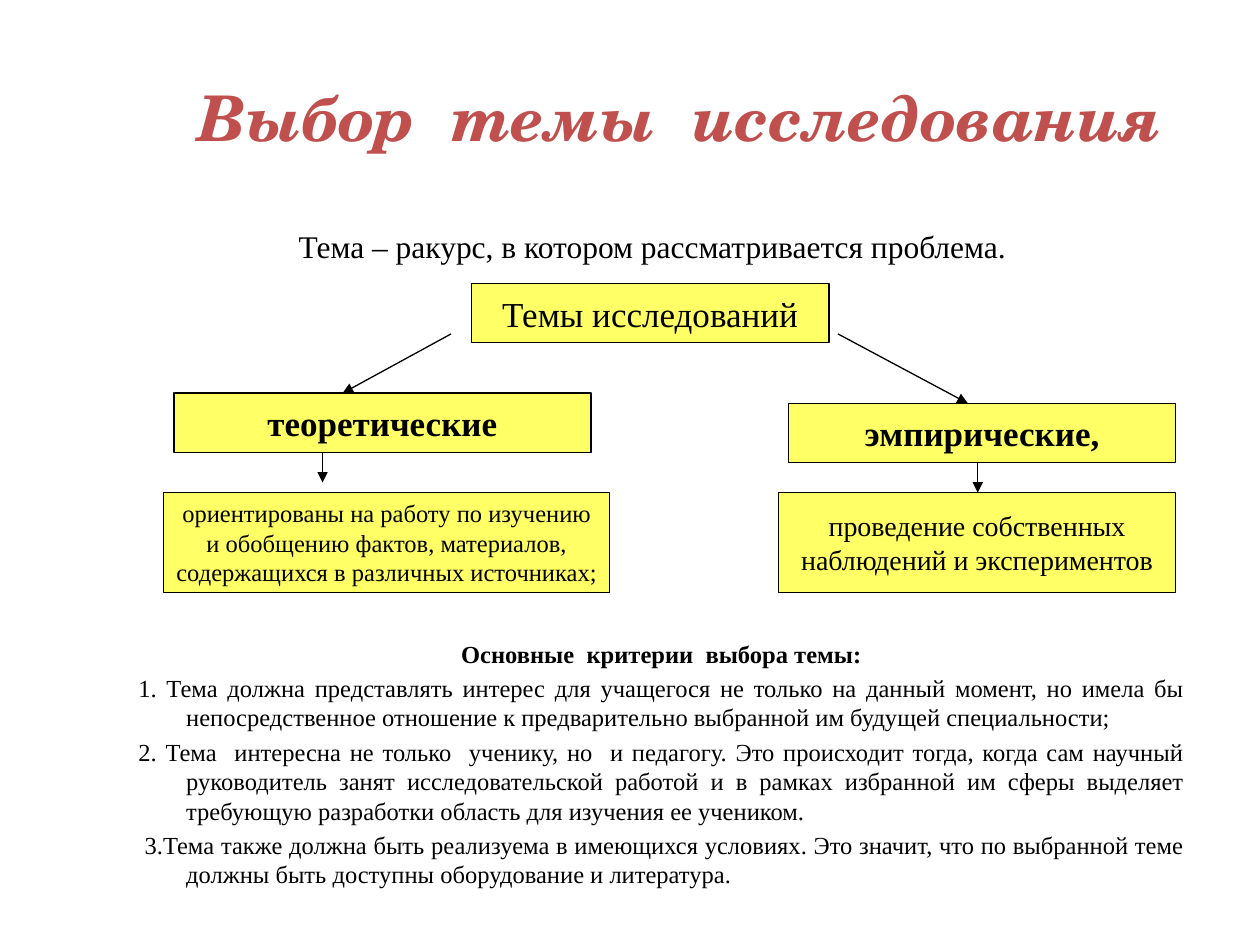
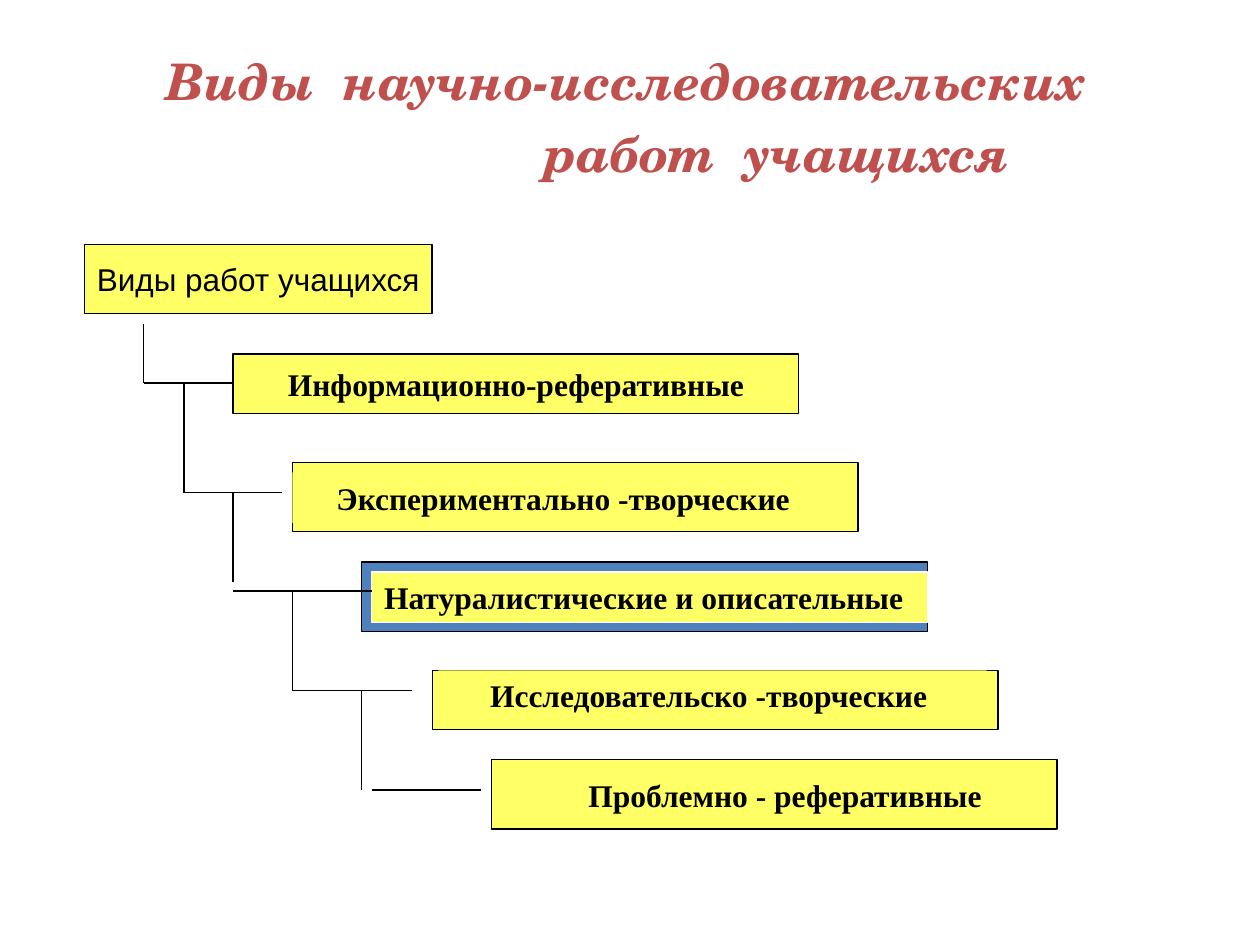
from lxml import etree
from pptx import Presentation
from pptx.dml.color import RGBColor
from pptx.enum.shapes import MSO_CONNECTOR, MSO_SHAPE
from pptx.enum.text import MSO_ANCHOR, PP_ALIGN
from pptx.oxml.ns import qn
from pptx.util import Inches, Pt

RECT = MSO_SHAPE.RECTANGLE
LINE = MSO_CONNECTOR.STRAIGHT
TOP, MIDDLE = MSO_ANCHOR.TOP, MSO_ANCHOR.MIDDLE
LEFT, CENTER, JUSTIFY = PP_ALIGN.LEFT, PP_ALIGN.CENTER, PP_ALIGN.JUSTIFY

YELLOW, BLUE, RED = "FFFF66", "4F81BD", "C0504D"
BLACK, WHITE = "000000", "FFFFFF"
SERIF, SANS, SCRIPT = "Times New Roman", "Arial", "TeX Gyre Schola"
COLS, ROWS = 100, 75
THIN = Pt(0.75)


def rgb(code):
    return RGBColor.from_string(code)


def indent(par, left, first=0):
    """Set the left margin and first-line indent of a paragraph, in inches."""
    props = par._p.get_or_add_pPr()
    props.set("marL", str(Inches(left)))
    props.set("indent", str(Inches(first)))


class Deck:
    """Holds the style and the current slide; lengths are grid columns and rows."""

    def __init__(self):
        self.prs = Presentation()
        self.prs.slide_width, self.prs.slide_height = Inches(10), Inches(7.5)
        self.col = self.prs.slide_width / COLS
        self.row = self.prs.slide_height / ROWS

    def page(self):
        self.slide = self.prs.slides.add_slide(self.prs.slide_layouts[6])
        self.slide.background.fill.solid()
        self.slide.background.fill.fore_color.rgb = rgb(WHITE)

    def grid(self, *nums):
        """Turn alternating columns and rows into lengths."""
        return [round(n * (self.row if i % 2 else self.col))
                for i, n in enumerate(nums)]

    def label(self, shape, lines, size, font=SERIF, bold=False, color=BLACK,
              align=CENTER, anchor=MIDDLE, wrap=True, inset=0.1):
        frame = shape.text_frame
        frame.text = "\n".join(lines)
        frame.word_wrap, frame.vertical_anchor = wrap, anchor
        frame.margin_left = Inches(inset)
        for par in frame.paragraphs:
            par.alignment = align
            for run in par.runs:
                run.font.size, run.font.name = Pt(size), font
                run.font.bold, run.font.color.rgb = bold, rgb(color)
        return frame.paragraphs

    def text(self, at, lines, size, **style):
        shape = self.slide.shapes.add_textbox(*self.grid(*at))
        return self.label(shape, lines, size, **style)

    def title(self, at, lines, size, **style):
        pars = self.text(at, lines, size, font=SCRIPT, bold=True, color=RED, **style)
        for par in pars:
            for run in par.runs:
                run.font.italic = True
        return pars

    def box(self, at, lines=(), size=18, fill=YELLOW, edge=BLACK, **style):
        shape = self.slide.shapes.add_shape(RECT, *self.grid(*at))
        shape.shadow.inherit = False
        shape.fill.solid()
        shape.fill.fore_color.rgb = rgb(fill)
        if edge:
            shape.line.color.rgb, shape.line.width = rgb(edge), THIN
        else:
            shape.line.fill.background()
        if lines:
            self.label(shape, lines, size, **style)

    def line(self, *ends, arrow=False):
        link = self.slide.shapes.add_connector(LINE, *self.grid(*ends))
        link.line.color.rgb, link.line.width = rgb(BLACK), THIN
        props = link._element.spPr
        if arrow:
            tail = etree.SubElement(props.find(qn("a:ln")), qn("a:tailEnd"))
            tail.set("type", "triangle")
        etree.SubElement(props, qn("a:effectLst"))


def topics(deck):
    deck.page()
    deck.title((6.7, 3, 90.6, 12.5), ["Выбор  темы  исследования"], 36, inset=0.51)
    deck.text((10, 17.5, 85, 4.2),
              ["Тема – ракурс, в котором рассматривается проблема."],
              18, align=LEFT, anchor=TOP, inset=1.37)

    pars = deck.text((10, 50.2, 85, 22), [
        "Основные  критерии  выбора темы:",
        "1. Тема должна представлять интерес для учащегося не только на данный "
        "момент, но имела бы непосредственное отношение к предварительно "
        "выбранной им будущей специальности;",
        "2. Тема  интересна не только  ученику, но  и педагогу. Это происходит "
        "тогда, когда сам научный руководитель занят исследовательской работой "
        "и в рамках избранной им сферы выделяет требующую разработки область "
        "для изучения ее учеником.",
        "3.Тема также должна быть реализуема в имеющихся условиях. Это значит, "
        "что по выбранной теме должны быть доступны оборудование и литература.",
    ], 14, align=JUSTIFY, anchor=TOP)
    head, *items = pars
    head.alignment, head.runs[0].font.bold = CENTER, True
    for par, first in zip(items, (-0.38, -0.38, -0.33)):
        indent(par, 0.38, first)
        par.space_before = Pt(2.8)

    for at, size, bold, lines in (
        ((37.4, 22.5, 28.4, 4.7), 20, False, ["Темы исследований"]),
        ((13.8, 31.2, 33.1, 4.7), 20, True, ["теоретические"]),
        ((62.6, 32, 30.7, 4.7), 20, True, ["эмпирические,"]),
        ((13, 39.1, 35.4, 7.9), 14, False,
         ["ориентированы на работу по изучению",
          "и обобщению фактов, материалов,",
          "содержащихся в различных источниках;"]),
        ((61.8, 39.1, 31.5, 7.9), 16, False,
         ["проведение собственных", "наблюдений и экспериментов"]),
    ):
        deck.box(at, lines, size, bold=bold, wrap=False)

    for ends in ((35.8, 26.5, 27.2, 31.2), (66.5, 26.5, 76.8, 32),
                 (25.6, 35.9, 25.6, 38.3), (77.6, 36.7, 77.6, 39.1)):
        deck.line(*ends, arrow=True)


def kinds(deck):
    deck.page()
    pars = deck.title((10, 3, 90, 12.5),
                      ["Виды  научно-исследовательских", "работ  учащихся"],
                      28.8, align=LEFT)
    for par, left in zip(pars, (0.22, 3.22)):
        indent(par, left)
    pars[1].space_before = Pt(6.5)

    deck.box((6.7, 19.4, 27.6, 5.5), ["Виды работ учащихся"], font=SANS, wrap=False)
    wide = 44.9
    deck.box((18.5, 28.1, wide, 4.7), ["Информационно-реферативные"],
             bold=True, wrap=False)
    for x, y, high, fill in ((23.2, 36.7, 5.5, YELLOW), (28.7, 44.6, 5.5, BLUE),
                             (34.3, 53.2, 4.7, YELLOW), (39, 60.3, 5.5, YELLOW)):
        deck.box((x, y, wide, high), fill=fill)
    for x, y, width, edge, inset, label in (
        (23.2, 37.5, 43.5, None, 0.35, "Экспериментально -творческие"),
        (29.5, 45.4, 44.1, WHITE, 0.1, "Натуралистические и описательные"),
        (34.8, 53.2, 43.5, None, 0.41, "Исследовательско -творческие"),
        (39.5, 61.1, 44.3, None, 0.72, "Проблемно - реферативные"),
    ):
        deck.box((x, y, width, 4), [label], edge=edge, bold=True,
                 align=LEFT, anchor=TOP, inset=inset)

    # Each step drops from the level before it, then runs across to its box.
    top = 25.7
    for x, foot, left, right, level in (
        (11.4, 30.4, 11.4, 18.5, 30.4), (14.6, 39.1, 14.6, 22.4, 39.1),
        (18.5, 46.2, 18.5, 29.5, 46.9), (23.2, 54.8, 23.2, 32.7, 54.8),
        (28.7, 62.7, 29.5, 38.2, 62.7),
    ):
        deck.line(x, top, x, foot)
        deck.line(left, level, right, level)
        top = level


def main():
    deck = Deck()
    topics(deck)
    kinds(deck)
    deck.prs.save("out.pptx")


if __name__ == "__main__":
    main()
